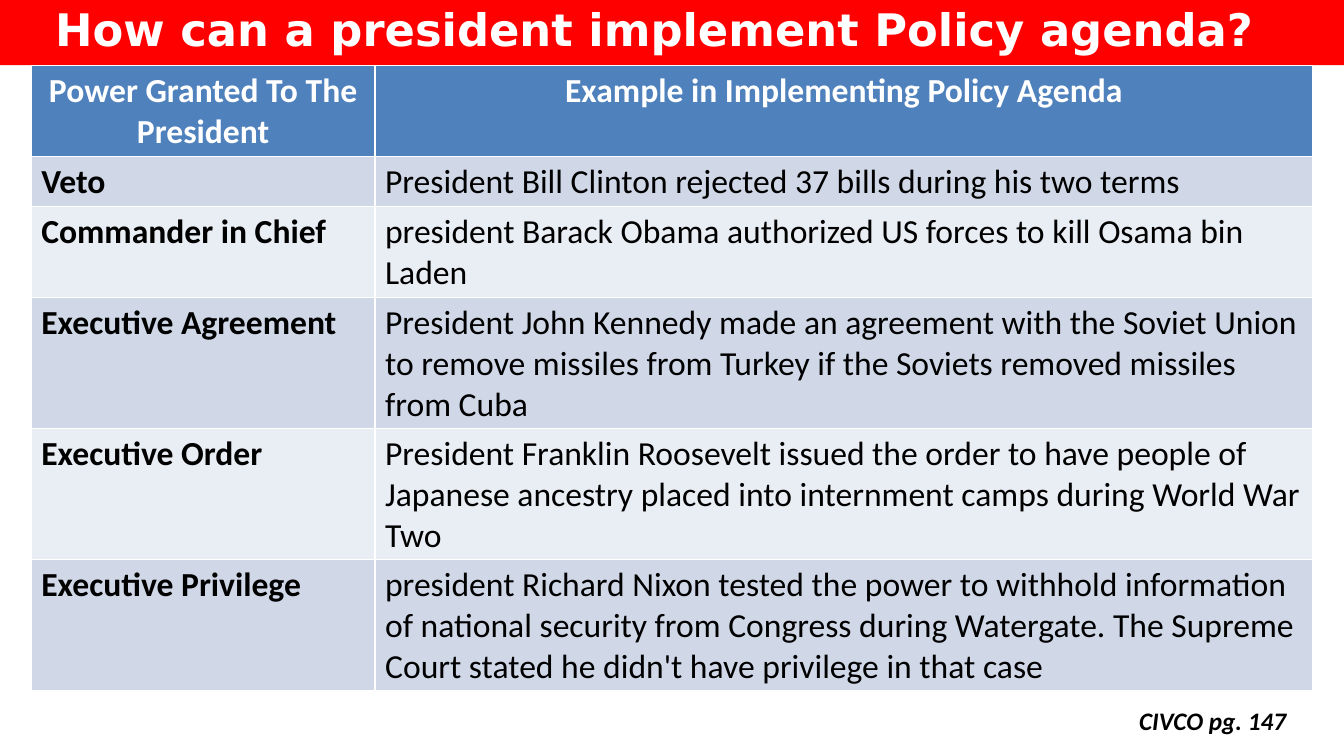
from dataclasses import dataclass

from pptx import Presentation
from pptx.dml.color import RGBColor as RGB
from pptx.enum.text import MSO_ANCHOR as ANCHOR, MSO_AUTO_SIZE as FIT, PP_ALIGN as ALIGN
from pptx.util import Inches, Pt


@dataclass(frozen=True)
class Theme:
    """Colours, fonts and type sizes of the slide."""
    banner: str = "FF0000"
    header: str = "4F81BD"
    bands: tuple = ("D0D8E8", "E9EDF4")
    light: str = "FFFFFF"
    dark: str = "000000"
    title_font: str = "DejaVu Sans"
    body_font: str = "Calibri"
    title_size: int = 32
    table_size: int = 24
    source_size: int = 18


THEME = Theme()
WIDTH, HEIGHT = 13.33, 7.5
COLUMNS = (3.41, 9.3)
LINE_HEIGHT, ROW_PADDING = 0.4, 0.1
HEADINGS = ("Power Granted To The President", "Example in Implementing Policy Agenda")
POWERS = [
    ("Veto", "President Bill Clinton rejected 37 bills during his two terms", 1),
    ("Commander in Chief",
     "president Barack Obama authorized US forces to kill Osama bin Laden", 2),
    ("Executive Agreement",
     "President John Kennedy made an agreement with the Soviet Union to remove "
     "missiles from Turkey if the Soviets removed missiles from Cuba", 3),
    ("Executive Order",
     "President Franklin Roosevelt issued the order to have people of Japanese "
     "ancestry placed into internment camps during World War Two", 3),
    ("Executive Privilege",
     "president Richard Nixon tested the power to withhold information of national "
     "security from Congress during Watergate. The Supreme Court stated he didn't "
     "have privilege in that case", 3),
]


def write(tf, text, *, size, color=THEME.dark, font=THEME.body_font,
          bold=False, italic=False, align=ALIGN.LEFT):
    """Put one formatted paragraph into a text frame."""
    p = tf.paragraphs[0]
    p.alignment = align
    r = p.add_run()
    r.text = text
    r.font.name, r.font.size = font, Pt(size)
    r.font.bold, r.font.italic = bold, italic
    r.font.color.rgb = RGB.from_string(color)


def add_banner(s, x, y, w, h):
    """Fill the title placeholder as a banner across the box."""
    sp = s.shapes.title
    sp.left, sp.top, sp.width, sp.height = map(Inches, (x, y, w, h))
    sp.fill.solid()
    sp.fill.fore_color.rgb = RGB.from_string(THEME.banner)
    tf = sp.text_frame
    tf.margin_left = tf.margin_top = tf.margin_bottom = 0
    tf.margin_right = Inches(0.34)
    tf.vertical_anchor = ANCHOR.MIDDLE
    tf.auto_size = FIT.SHAPE_TO_FIT_TEXT
    write(tf, "How can a president implement Policy agenda?", size=THEME.title_size,
          color=THEME.light, font=THEME.title_font, bold=True, align=ALIGN.CENTER)


def fill_cell(cell, text, fill, **fmt):
    """Colour a table cell and write its text."""
    cell.fill.solid()
    cell.fill.fore_color.rgb = RGB.from_string(fill)
    write(cell.text_frame, text, size=THEME.table_size, **fmt)


def add_powers(s, x, y, w):
    """Draw the table of powers, each row as high as its lines of text."""
    heights = [n * LINE_HEIGHT + ROW_PADDING for n in (2, *(row[2] for row in POWERS))]
    table = s.shapes.add_table(len(heights), len(COLUMNS), Inches(x), Inches(y),
                               Inches(w), Inches(sum(heights))).table
    for column, share in zip(table.columns, COLUMNS):
        column.width = Inches(w * share / sum(COLUMNS))
    for row, height in zip(table.rows, heights):
        row.height = Inches(height)
    for j, heading in enumerate(HEADINGS):
        fill_cell(table.cell(0, j), heading, THEME.header,
                  color=THEME.light, bold=True, align=ALIGN.CENTER)
    for i, (power, example, _) in enumerate(POWERS):
        band = THEME.bands[i % 2]
        fill_cell(table.cell(i + 1, 0), power, band, bold=True)
        fill_cell(table.cell(i + 1, 1), example, band)


def add_source(s, x, y, w, h):
    """Write the page reference in the box."""
    tf = s.shapes.add_textbox(*map(Inches, (x, y, w, h))).text_frame
    tf.word_wrap = False
    tf.auto_size = FIT.SHAPE_TO_FIT_TEXT
    write(tf, "CIVCO pg. 147", size=THEME.source_size, bold=True, italic=True)


def main():
    """Build and save the slide."""
    prs = Presentation()
    prs.slide_width, prs.slide_height = Inches(WIDTH), Inches(HEIGHT)
    s = prs.slides.add_slide(prs.slide_layouts[5])
    margin = 0.31
    add_banner(s, 0, 0.01, WIDTH, 0.54)
    add_powers(s, margin, 0.65, WIDTH - 2 * margin)
    add_source(s, WIDTH - margin - 1.82, 6.95, 1.82, 0.4)
    prs.save("out.pptx")


if __name__ == "__main__":
    main()
